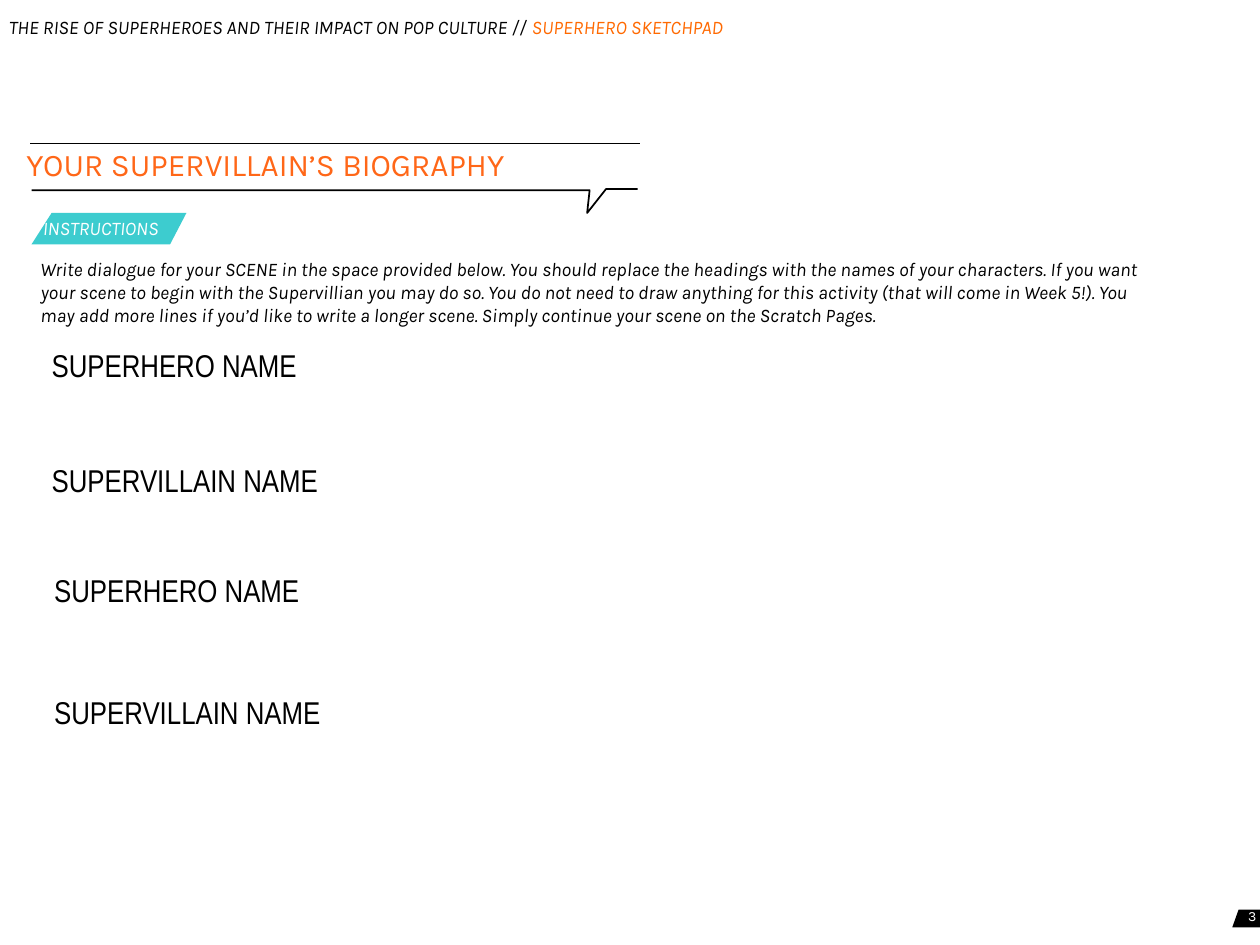
import pptx
import pptx.dml.color
import pptx.enum.shapes
import pptx.enum.text
import pptx.oxml.ns
import pptx.util
import lxml.etree
from dataclasses import dataclass
from typing import Optional

Inches = pptx.util.Inches
Align = pptx.enum.text.PP_ALIGN
Anchor = pptx.enum.text.MSO_ANCHOR

HUES = {
    "ink": "000000",
    "paper": "FFFFFF",
    "teal": "3DCCCF",
    "amber": "FF6900",
    "orange": "FF6718",
}
FONTS = {
    "note": {"name": "Karla", "size": pptx.util.Pt(11), "italic": True},
    "title": {"name": "Karla", "size": pptx.util.Pt(18)},
    "page": {"name": "Karla", "size": pptx.util.Pt(8)},
    "role": {"name": "Arial Narrow", "size": pptx.util.Pt(18)},
}


@dataclass
class Label:
    box: tuple[float, float, float, float]
    runs: list[tuple[str, str]]
    font: str
    pad: float = 0.05
    align: Align = Align.LEFT
    anchor: Anchor = Anchor.TOP


@dataclass
class Outline:
    points: list[tuple[float, float]]
    fill: Optional[str] = None
    line: Optional[str] = None


def tint(hue: str) -> pptx.dml.color.RGBColor:
    return pptx.dml.color.RGBColor.from_string(HUES[hue])


def apply(target: object, values: dict) -> None:
    for key, value in values.items():
        setattr(target, key, value)


def stroke(line: pptx.dml.line.LineFormat, hue: str) -> None:
    line.color.rgb = tint(hue)
    line.width = pptx.util.Pt(1)


def write(slide: pptx.slide.Slide, label: Label) -> None:
    frame = slide.shapes.add_textbox(*map(Inches, label.box)).text_frame
    pad = Inches(label.pad)
    apply(frame, {
        "margin_left": pad,
        "margin_top": pad,
        "margin_right": pad,
        "margin_bottom": pad,
        "word_wrap": True,
        "auto_size": pptx.enum.text.MSO_AUTO_SIZE.SHAPE_TO_FIT_TEXT,
        "vertical_anchor": label.anchor,
    })
    para = frame.paragraphs[0]
    para.alignment = label.align
    for text, hue in label.runs:
        run = para.add_run()
        run.text = text
        apply(run.font, FONTS[label.font])
        run.font.color.rgb = tint(hue)


def trace(slide: pptx.slide.Slide, form: Outline) -> None:
    spots = [(Inches(x), Inches(y)) for x, y in form.points]
    maker = slide.shapes.build_freeform(*spots[0])
    maker.add_line_segments(spots[1:], close=form.fill is not None)
    shape = maker.convert_to_shape()
    shape.shadow.inherit = False
    if form.fill:
        shape.fill.solid()
        shape.fill.fore_color.rgb = tint(form.fill)
    else:
        shape.fill.background()
    if form.line:
        stroke(shape.line, form.line)
    else:
        shape.line.fill.background()


def rule(slide: pptx.slide.Slide, left: float, right: float, top: float) -> None:
    line = slide.shapes.add_connector(
        pptx.enum.shapes.MSO_CONNECTOR.STRAIGHT,
        Inches(left), Inches(top), Inches(right), Inches(top))
    stroke(line.line, "ink")
    lxml.etree.SubElement(
        line._element.spPr, pptx.oxml.ns.qn("a:effectLst"))


HEADER = Label((0.02, 0.07, 7.24, 0.27), [
    ("THE RISE OF SUPERHEROES AND THEIR IMPACT ON POP CULTURE // ", "ink"),
    ("SUPERHERO SKETCHPAD", "amber"),
], "note")
GUIDE = Label((0.27, 1.99, 8.92, 0.77), [(
    "Write dialogue for your SCENE in the space provided below. "
    "You should replace the headings with the names of your characters. "
    "If you want your scene to begin with the Supervillian you may do so. "
    "You do not need to draw anything for this activity "
    "(that will come in Week 5!). "
    "You may add more lines if you’d like to write a longer scene. "
    "Simply continue your scene on the Scratch Pages.", "ink")], "note")
TITLE = Label((0.16, 1.1, 6.81, 0.38),
              [("YOUR SUPERVILLAIN’S BIOGRAPHY", "orange")], "title")
PAGE = Label((9.47, 7.11, 0.6, 0.32), [("3", "paper")], "page",
             0.1, Align.RIGHT, Anchor.MIDDLE)
BADGE = Label((0.29, 1.67, 1.18, 0.27), [("INSTRUCTIONS", "paper")], "note")
ROLES = [
    Label((left, top, 2.44, 0.41), [(f"{role} NAME", "ink")], "role")
    for role, left, top in [
        ("SUPERHERO", 0.36, 2.7),
        ("SUPERVILLAIN", 0.36, 3.61),
        ("SUPERHERO", 0.38, 4.48),
        ("SUPERVILLAIN", 0.38, 5.45),
    ]
]
CORNER = Outline([(9.83, 7.22), (10, 7.22), (10, 7.36), (9.78, 7.36)], "ink")
BANNER = Outline([(0.41, 1.69), (1.48, 1.69), (1.35, 1.94), (0.25, 1.94)],
                 "teal")
BUBBLE = Outline([(0.25, 1.51), (4.68, 1.51), (4.66, 1.69), (4.81, 1.5),
                  (5.06, 1.5)], line="ink")


def main() -> None:
    deck = pptx.Presentation()
    apply(deck, {"slide_width": Inches(10), "slide_height": Inches(7.5)})
    slide = deck.slides.add_slide(deck.slide_layouts[6])
    write(slide, HEADER)
    for form in (CORNER, BANNER):
        trace(slide, form)
    for label in (GUIDE, TITLE, PAGE):
        write(slide, label)
    rule(slide, 0.24, 5.08, 1.14)
    trace(slide, BUBBLE)
    for label in (BADGE, *ROLES):
        write(slide, label)
    deck.save("out.pptx")


if __name__ == "__main__":
    main()
